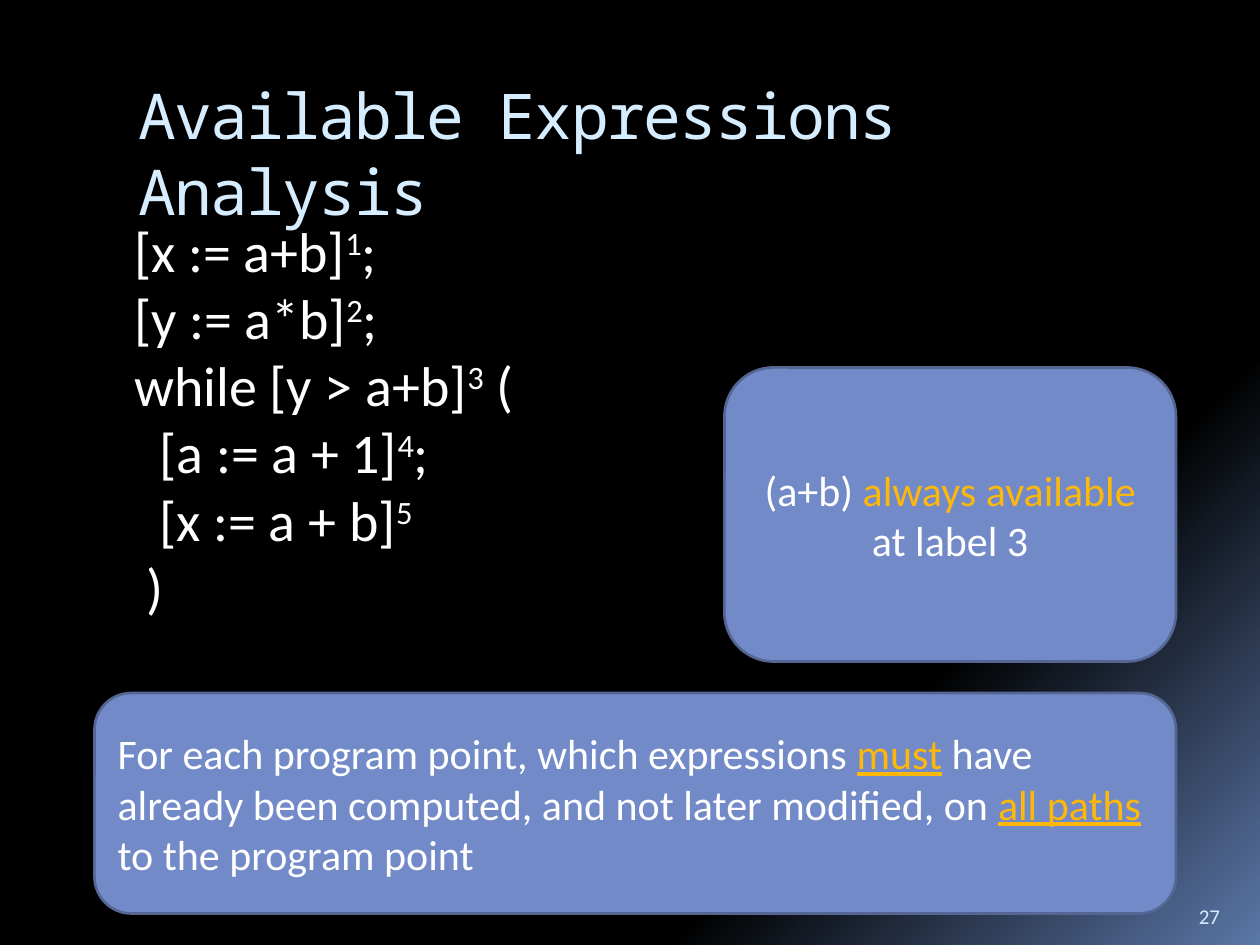
from dataclasses import dataclass

from pptx import Presentation
from pptx.dml.color import RGBColor
from pptx.enum.shapes import MSO_SHAPE
from pptx.enum.text import MSO_ANCHOR, MSO_AUTO_SIZE, PP_ALIGN
from pptx.util import Inches, Pt


@dataclass(frozen=True)
class Theme:
    title_font: str = "Noto Sans Mono"
    body_font: str = "Calibri"
    title_size: int = 36
    code_size: int = 32
    callout_size: int = 24
    number_size: int = 12
    night: str = "000000"
    glow: str = "5B77A8"
    pale: str = "D6ECFF"
    white: str = "FFFFFF"
    accent: str = "FEB80A"
    panel: str = "738AC8"
    border: str = "556694"


THEME = Theme()
WIDTH, HEIGHT = Inches(10), Inches(7.5)
COLUMNS, ROWS = 120, 90

CODE = [
    ("[x := a+b]", "1", ";"),
    ("[y := a*b]", "2", ";"),
    ("while [y > a+b]", "3", " ("),
    ("  [a := a + 1]", "4", ";"),
    ("  [x := a + b]", "5", ""),
    (" )", "", ""),
]


def cell(column, row, columns, rows):
    return (
        round(WIDTH * column / COLUMNS),
        round(HEIGHT * row / ROWS),
        round(WIDTH * columns / COLUMNS),
        round(HEIGHT * rows / ROWS),
    )


def add_text(para, text, size, color=THEME.white, font=THEME.body_font,
             underline=False, superscript=False, spacing=0):
    span = para.add_run()
    span.text = text
    span.font.name = font
    span.font.size = Pt(size)
    span.font.color.rgb = RGBColor.from_string(color)
    span.font.underline = underline
    properties = span._r.get_or_add_rPr()
    if superscript:
        properties.set("baseline", "30000")
    if spacing:
        properties.set("spc", str(spacing * 100))


def paint_background(page):
    fill = page.background.fill
    fill.gradient()
    fill.gradient_angle = 315
    stops = ((0.73, THEME.night), (1, THEME.glow))
    for stop, (position, color) in zip(fill.gradient_stops, stops):
        stop.position = position
        stop.color.rgb = RGBColor.from_string(color)


def add_title(page, text, place):
    title = page.shapes.title
    title.left, title.top, title.width, title.height = place
    frame = title.text_frame
    frame.word_wrap = True
    frame.auto_size = MSO_AUTO_SIZE.NONE
    frame.vertical_anchor = MSO_ANCHOR.TOP
    para = frame.paragraphs[0]
    para.alignment = PP_ALIGN.LEFT
    add_text(para, text, THEME.title_size, color=THEME.pale,
             font=THEME.title_font, spacing=-1)


def add_code(page, lines, place):
    frame = page.shapes.add_textbox(*place).text_frame
    frame.word_wrap = True
    frame.auto_size = MSO_AUTO_SIZE.SHAPE_TO_FIT_TEXT
    for index, (statement, label, ending) in enumerate(lines):
        para = frame.add_paragraph() if index else frame.paragraphs[0]
        add_text(para, statement, THEME.code_size)
        if label:
            add_text(para, label, THEME.code_size, superscript=True)
        if ending:
            add_text(para, ending, THEME.code_size)


def add_callout(page, pieces, place, alignment=PP_ALIGN.LEFT):
    box = page.shapes.add_shape(MSO_SHAPE.ROUNDED_RECTANGLE, *place)
    box.shadow.inherit = False
    box.fill.solid()
    box.fill.fore_color.rgb = RGBColor.from_string(THEME.panel)
    box.line.color.rgb = RGBColor.from_string(THEME.border)
    box.line.width = Pt(1.5)
    frame = box.text_frame
    frame.word_wrap = True
    frame.vertical_anchor = MSO_ANCHOR.MIDDLE
    para = frame.paragraphs[0]
    para.alignment = alignment
    for text, style in pieces:
        add_text(para, text, THEME.callout_size, **style)


def add_page_number(page, number, place):
    frame = page.shapes.add_textbox(*place).text_frame
    frame.word_wrap = True
    frame.vertical_anchor = MSO_ANCHOR.BOTTOM
    add_text(frame.paragraphs[0], number, THEME.number_size, color=THEME.pale)


def main():
    deck = Presentation()
    deck.slide_width, deck.slide_height = WIDTH, HEIGHT
    page = deck.slides.add_slide(deck.slide_layouts[5])
    key = {"color": THEME.accent}
    key_underlined = {**key, "underline": True}

    paint_background(page)
    add_title(page, "Available Expressions Analysis", cell(12, 6.7, 102, 12))
    add_page_number(page, "27", cell(113, 84.2, 6, 4.8))
    add_callout(page, [
        ("For each program point, which expressions ", {}),
        ("must", key_underlined),
        (" have already been computed, and not later modified, on ", {}),
        ("all paths ", key_underlined),
        ("to the program point", {}),
    ], cell(9, 66, 103, 21))
    add_code(page, CODE, cell(11.6, 20, 45.4, 40))
    add_callout(page, [
        ("(a+b) ", {}),
        ("always available", key),
        (" at label 3", {}),
    ], cell(69, 35, 43, 28), alignment=PP_ALIGN.CENTER)

    deck.save("out.pptx")


if __name__ == "__main__":
    main()
